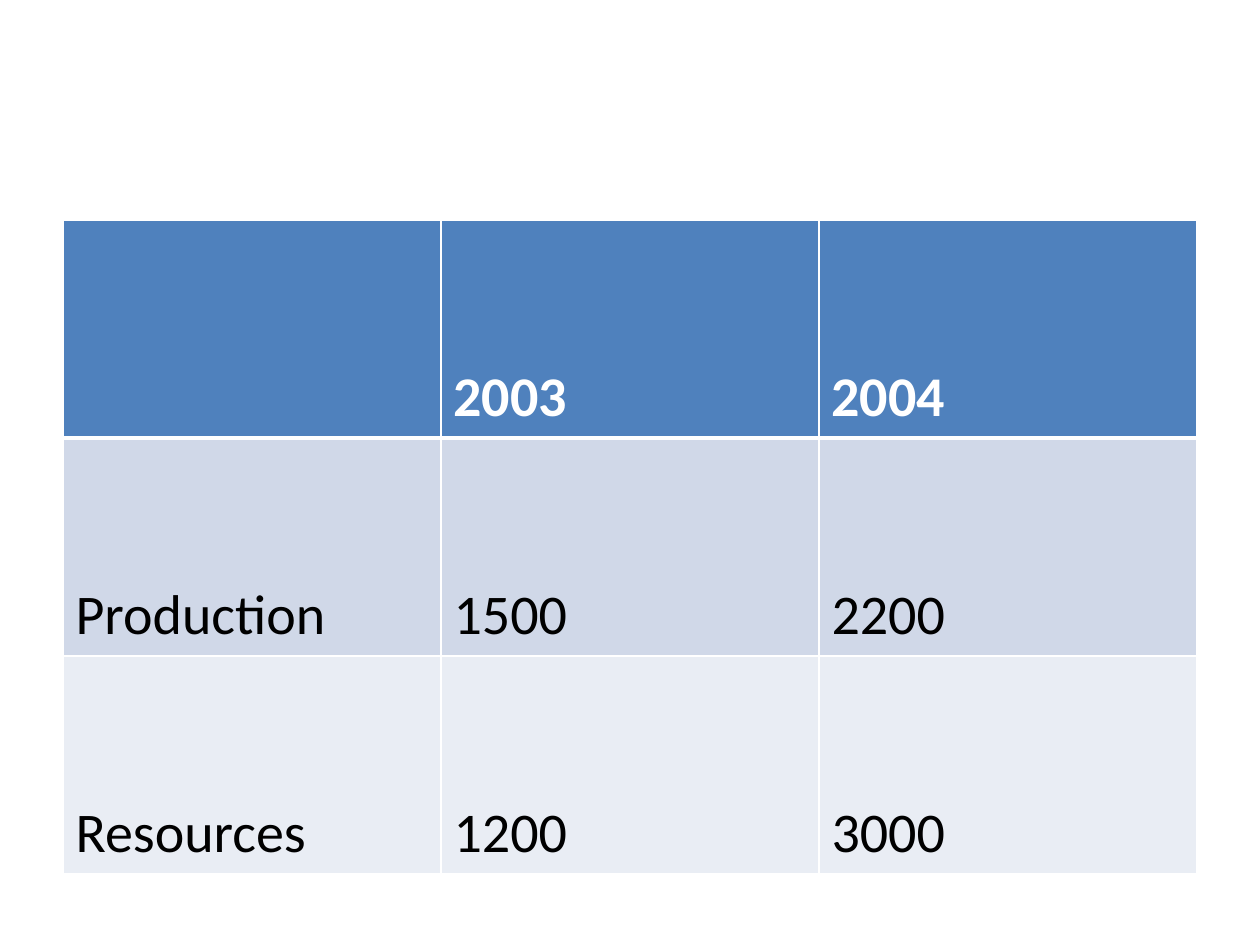
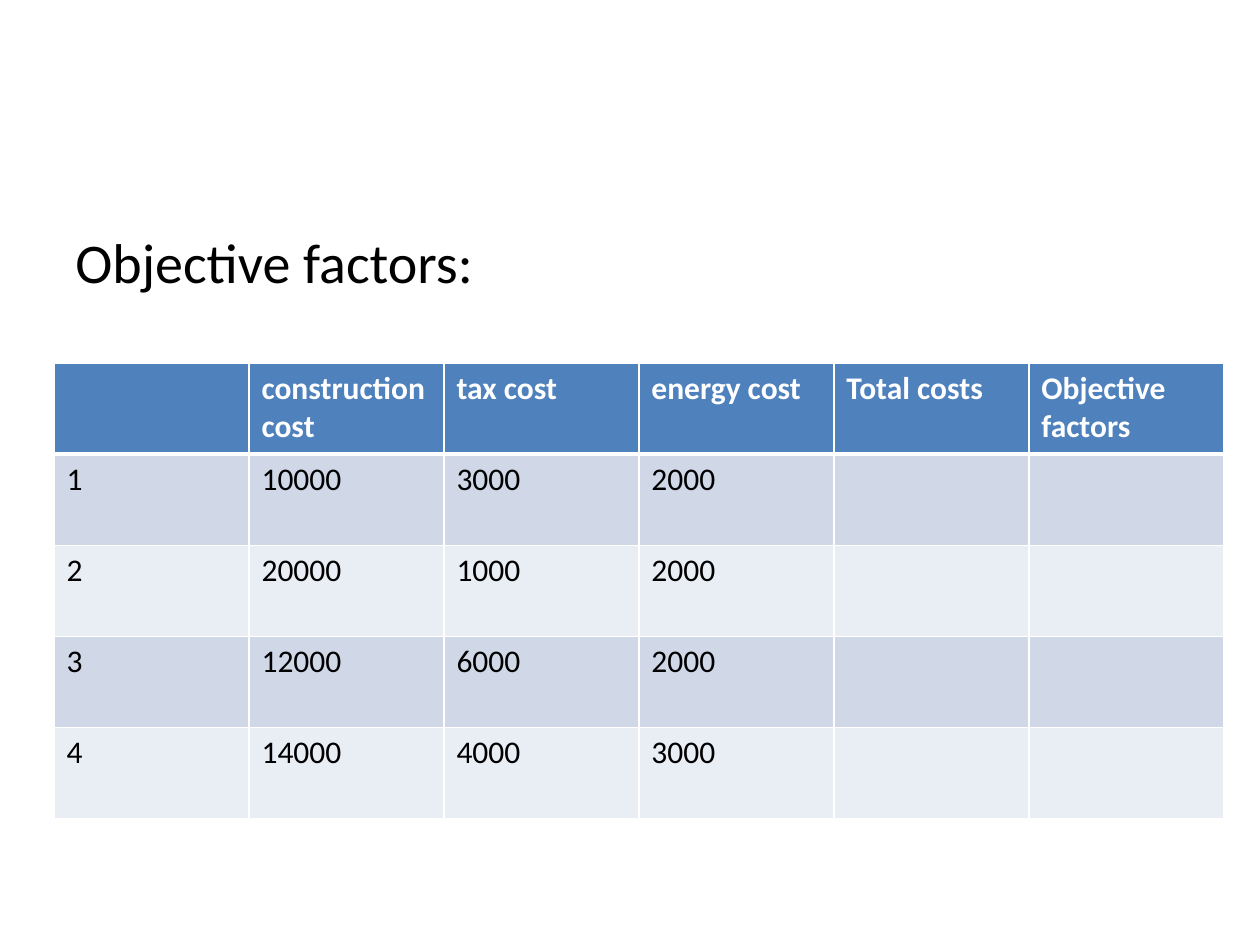
from dataclasses import dataclass

from lxml import etree
from pptx import Presentation
from pptx.dml.color import RGBColor
from pptx.enum.text import MSO_ANCHOR
from pptx.oxml.ns import qn
from pptx.util import Pt

PX = 914400 // 126
TOP = MSO_ANCHOR.TOP


@dataclass(frozen=True)
class Theme:
    font: str = "Calibri"
    header: str = "4F81BD"
    bands: tuple = ("D0D8E8", "E9EDF4")
    white: str = "FFFFFF"
    black: str = "000000"
    large: int = 32
    small: int = 18
    thin: int = 1
    thick: int = 3


THEME = Theme()

OUTPUT_ROWS = [
    ["", "2003", "2004"],
    ["Production", "1500", "2200"],
    ["Resources", "1200", "3000"],
]
COST_ROWS = [
    ["", "construction cost", "tax cost", "energy cost", "Total costs", "Objective factors"],
    ["1", "10000", "3000", "2000", "", ""],
    ["2", "20000", "1000", "2000", "", ""],
    ["3", "12000", "6000", "2000", "", ""],
    ["4", "14000", "4000", "3000", "", ""],
]


def emu(*lengths):
    return [n * PX for n in lengths]


def write(tf, text, *, size, color=THEME.black, bold=False, spacing=None):
    tf.word_wrap = True
    p = tf.paragraphs[0]
    if spacing:
        p.line_spacing = spacing
    p.font.size = Pt(size)
    if text:
        r = p.add_run()
        r.text = text
        r.font.name = THEME.font
        r.font.size = Pt(size)
        r.font.bold = bold
        r.font.color.rgb = RGBColor.from_string(color)


def set_borders(cell, **widths):
    """Draw white cell borders; widths are points by side, in the order L, R, T, B."""
    tc_pr = cell._tc.get_or_add_tcPr()
    for side, width in widths.items():
        ln = etree.SubElement(tc_pr, qn(f"a:ln{side}"), w=str(Pt(width)))
        fill = etree.SubElement(ln, qn("a:solidFill"))
        etree.SubElement(fill, qn("a:srgbClr"), val=THEME.white)


def add_banded_table(slide, box, rows, *, size, spacing=None):
    """Fill the box with equal cells: a blue header row above alternating bands."""
    x, y, w, h = box
    n_rows, n_cols = len(rows), len(rows[0])
    table = slide.shapes.add_table(n_rows, n_cols, *emu(x, y, w, h)).table
    for col in table.columns:
        col.width = w * PX // n_cols
    for i, (row, texts) in enumerate(zip(table.rows, rows)):
        row.height = h * PX // n_rows
        is_header = i == 0
        for cell, text in zip(row.cells, texts):
            set_borders(cell, L=THEME.thin, R=THEME.thin,
                        T=THEME.thick if i == 1 else THEME.thin,
                        B=THEME.thick if is_header else THEME.thin)
            cell.fill.solid()
            cell.fill.fore_color.rgb = RGBColor.from_string(
                THEME.header if is_header else THEME.bands[(i - 1) % 2])
            cell.vertical_anchor = TOP
            write(cell.text_frame, text, size=size, bold=is_header, spacing=spacing,
                  color=THEME.white if is_header else THEME.black)


def add_body(slide, box, text):
    tf = slide.shapes.add_textbox(*emu(*box)).text_frame
    tf.vertical_anchor = TOP
    write(tf, text, size=THEME.large)


def main():
    prs = Presentation()
    prs.slide_width, prs.slide_height = emu(1260, 945)
    blank = prs.slide_layouts[6]

    output_slide = prs.slides.add_slide(blank)
    add_banded_table(output_slide, (63, 220, 1134, 654), OUTPUT_ROWS,
                     size=THEME.large, spacing=3.0)

    cost_slide = prs.slides.add_slide(blank)
    add_body(cost_slide, (63, 221, 1134, 624), "Objective factors:")
    add_banded_table(cost_slide, (54, 363, 1170, 456), COST_ROWS, size=THEME.small)

    prs.save("out.pptx")


if __name__ == "__main__":
    main()
